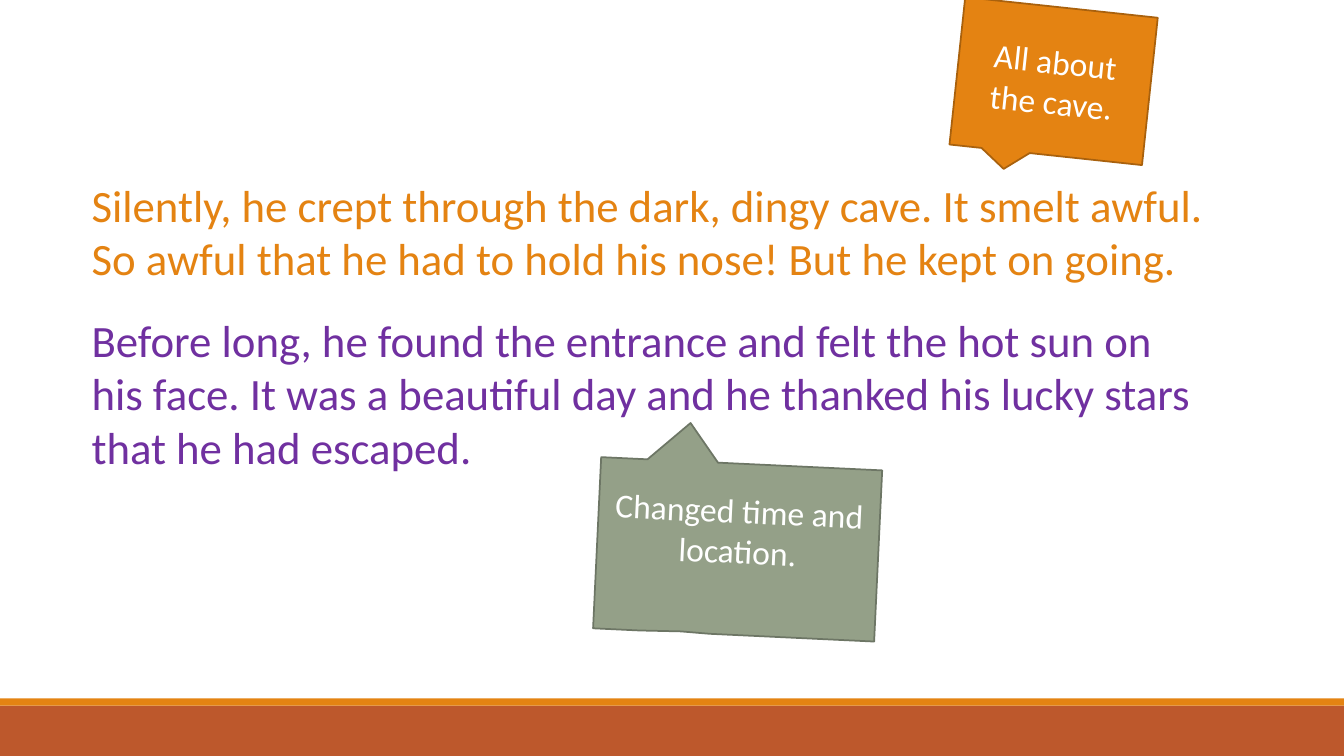
from pptx import Presentation
from pptx.dml.color import RGBColor
from pptx.enum.shapes import MSO_SHAPE
from pptx.enum.text import MSO_ANCHOR, PP_ALIGN
from pptx.util import Inches, Pt

RECT = MSO_SHAPE.RECTANGLE
CALLOUT = MSO_SHAPE.RECTANGULAR_CALLOUT
MIDDLE = MSO_ANCHOR.MIDDLE
CENTER = PP_ALIGN.CENTER
ORANGE, RUST, PURPLE, SAGE = "E48312", "BD582C", "7030A0", "94A088"
WIDE, HIGH = 13.33, 7.5


def color(code):
    return RGBColor.from_string(code)


def write(frame, text, size, code):
    frame.word_wrap = True
    run = frame.paragraphs[0].add_run()
    run.text = text
    run.font.name = "Calibri"
    run.font.size = Pt(size)
    run.font.color.rgb = color(code)


deck = Presentation()
deck.slide_width, deck.slide_height = Inches(WIDE), Inches(HIGH)
slide = deck.slides.add_slide(deck.slide_layouts[6])
shapes = slide.shapes

# Footer bands
for top, tall, code in [(7, 0.5, RUST), (6.93, 0.07, ORANGE)]:
    band = shapes.add_shape(RECT, 0, Inches(top), Inches(WIDE), Inches(tall))
    band.shadow.inherit = False
    band.fill.solid()
    band.fill.fore_color.rgb = color(code)
    band.line.fill.background()

# Story paragraphs
story = [
    (1.71, 1.18, ORANGE, "Silently, he crept through the dark, dingy cave. It smelt awful. "
     "So awful that he had to hold his nose! But he kept on going."),
    (3.05, 1.72, PURPLE, "Before long, he found the entrance and felt the hot sun on his face. "
     "It was a beautiful day and he thanked his lucky stars that he had escaped."),
]
for top, tall, code, text in story:
    box = shapes.add_textbox(Inches(0.81), Inches(top), Inches(11.33), Inches(tall))
    write(box.text_frame, text, 32, code)

# Callout outlines; the second is drawn in hundredths of an inch
cave = shapes.add_shape(CALLOUT, Inches(9.49), Inches(0.07), Inches(1.92), Inches(1.47))
pen = shapes.build_freeform(0, 38, scale=Inches(0.01))
pen.add_line_segments([(46, 38), (87, 0), (116, 38), (279, 38), (279, 208),
                       (116, 208), (87, 207), (46, 208), (0, 208)], close=True)
change = pen.convert_to_shape(Inches(5.93), Inches(4.22))

# Callout style and words
notes = [
    (cave, 6.1, ORANGE, "A9610D", "All about the cave."),
    (change, 2.7, SAGE, "6D7665", "Changed time and location."),
]
for note, turn, code, edge, text in notes:
    note.rotation = turn
    note.shadow.inherit = False
    note.fill.solid()
    note.fill.fore_color.rgb = color(code)
    note.line.color.rgb = color(edge)
    note.line.width = Pt(1.25)
    frame = note.text_frame
    frame.vertical_anchor = MIDDLE
    frame.paragraphs[0].alignment = CENTER
    write(frame, text, 24, "FFFFFF")

deck.save("out.pptx")
